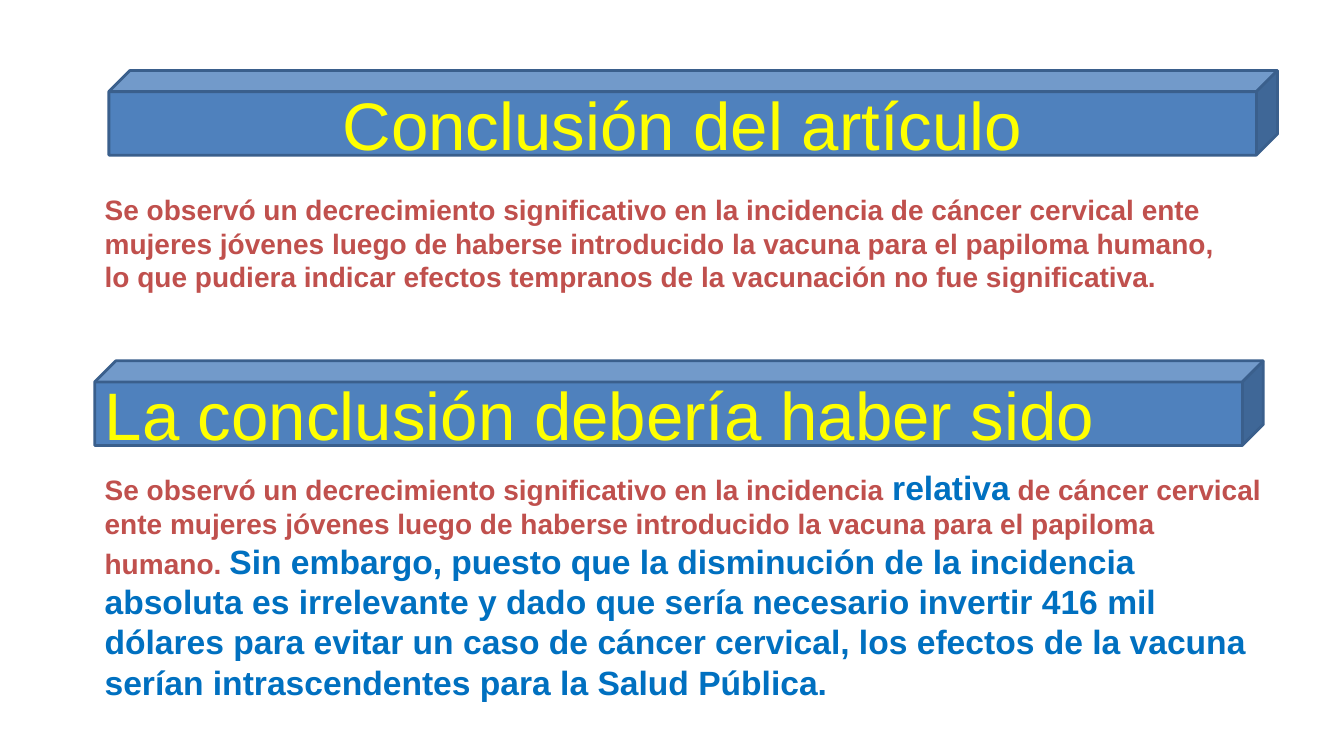
from pptx import Presentation
from pptx.dml.color import RGBColor
from pptx.enum.shapes import MSO_SHAPE
from pptx.enum.text import MSO_ANCHOR, MSO_AUTO_SIZE, PP_ALIGN
from pptx.util import Inches, Pt

HEX = {"bar": "4F81BD", "edge": "3A5F8C", "head": "FFFF00",
       "quote": "C0504D", "fix": "0070C0"}
STYLE = {
    "head": {"name": "Arial", "size": Pt(48), "bold": False},
    "quote": {"name": "Arial", "size": Pt(20), "bold": True},
    "fix": {"name": "Arial", "size": Pt(24), "bold": True},
}


class Page:
    def __init__(self, deck):
        self.wide, self.high = deck.slide_width, deck.slide_height
        self.slide = deck.slides.add_slide(deck.slide_layouts[6])

    def place(self, left, top, width, height):
        return [int(side * share / 100) for side, share in (
            (self.wide, left), (self.high, top),
            (self.wide, width), (self.high, height))]

    def fill_in(self, frame, runs, align, form):
        for key, value in form.items():
            setattr(frame, key, value)
        line = frame.paragraphs[0]
        line.alignment = align
        for kind, words in runs:
            run = line.add_run()
            run.text = words
            for key, value in STYLE[kind].items():
                setattr(run.font, key, value)
            run.font.color.rgb = RGBColor.from_string(HEX[kind])

    def text(self, area, runs):
        box = self.slide.shapes.add_textbox(*self.place(*area))
        self.fill_in(box.text_frame, runs, PP_ALIGN.LEFT, {
            "word_wrap": True, "auto_size": MSO_AUTO_SIZE.SHAPE_TO_FIT_TEXT})

    def bar(self, left, top, title, align):
        area = self.place(left, top, 86.95, 11.2)
        cube = self.slide.shapes.add_shape(MSO_SHAPE.CUBE, *area)
        cube.shadow.inherit = False
        cube.fill.solid()
        cube.fill.fore_color.rgb = RGBColor.from_string(HEX["bar"])
        cube.line.color.rgb = RGBColor.from_string(HEX["edge"])
        cube.line.width = Pt(2)
        self.fill_in(cube.text_frame, [("head", title)], align, {
            "word_wrap": True, "vertical_anchor": MSO_ANCHOR.MIDDLE})


def main():
    deck = Presentation()
    deck.slide_width, deck.slide_height = Inches(13.33), Inches(7.5)
    page = Page(deck)
    start = "Se observó un decrecimiento significativo en la incidencia "
    group = ("de cáncer cervical ente mujeres jóvenes luego de haberse "
             "introducido la vacuna para el papiloma humano")
    page.text((7.05, 61.07, 87.85, 33.6), [
        ("quote", start),
        ("fix", "relativa"),
        ("quote", f" {group}. "),
        ("fix", "Sin embargo, puesto que la disminución de la incidencia "
                "absoluta es irrelevante y dado que sería necesario invertir "
                "416 mil dólares para evitar un caso de cáncer cervical, los "
                "efectos de la vacuna serían intrascendentes para la Salud "
                "Pública."),
    ])
    page.text((7.05, 24.8, 84.25, 14.8), [
        ("quote", f"{start}{group}, lo que pudiera indicar efectos tempranos "
                  "de la vacunación no fue significativa."),
    ])
    page.bar(7.05, 47.73, "La conclusión debería haber sido", PP_ALIGN.LEFT)
    page.bar(8.1, 9.33, "Conclusión del artículo", PP_ALIGN.CENTER)
    deck.save("out.pptx")


if __name__ == "__main__":
    main()
